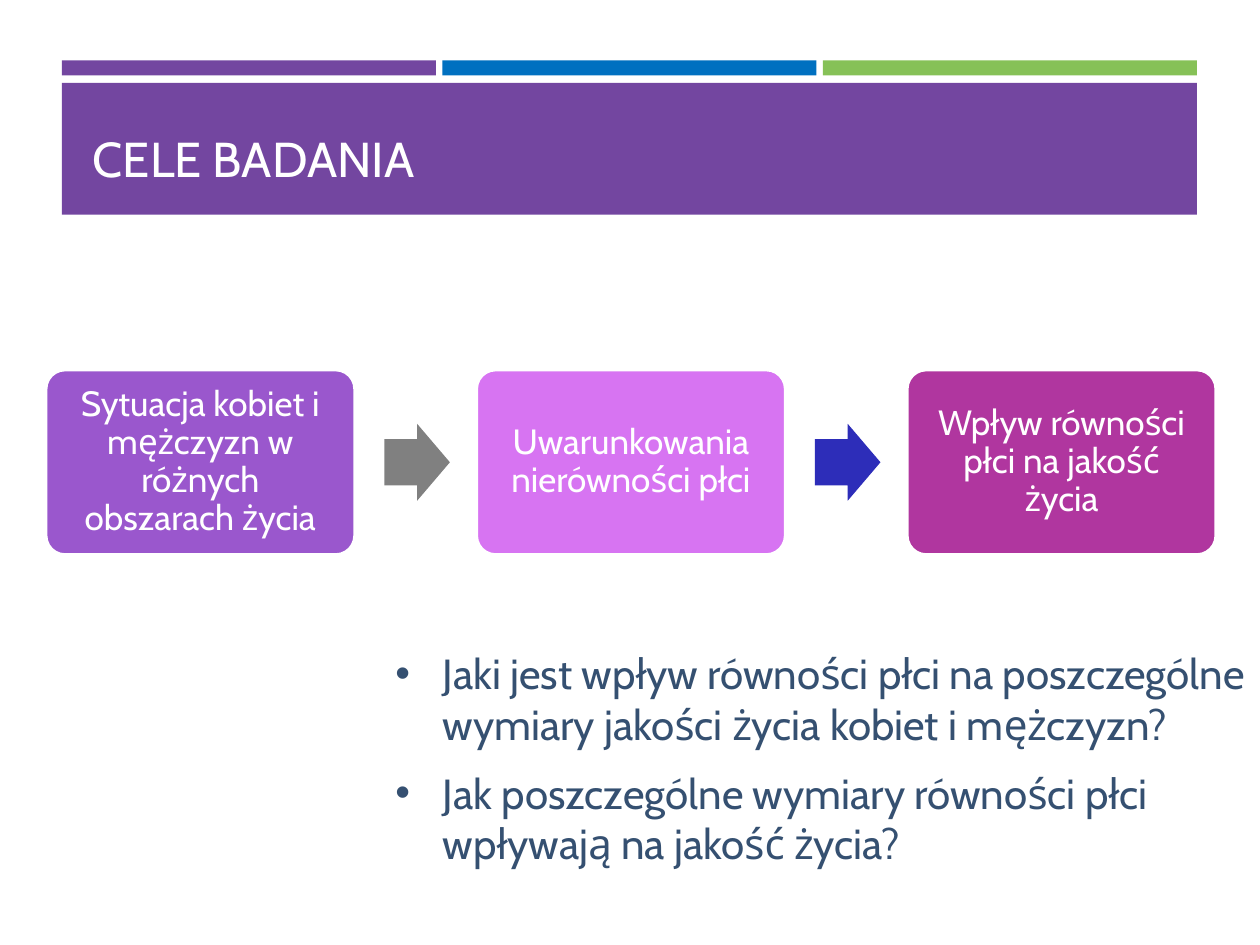
from dataclasses import dataclass
from typing import Any, Optional

from lxml import etree
from pptx import Presentation
from pptx.dml.color import RGBColor as RGB
from pptx.enum.shapes import MSO_SHAPE as Shape
from pptx.enum.text import MSO_ANCHOR as Anchor, MSO_AUTO_SIZE as AutoSize, PP_ALIGN as Align
from pptx.oxml.ns import qn
from pptx.util import Cm, Pt


@dataclass(frozen=True)
class Theme:
    font: str = "Cabin"
    white: str = "FFFFFF"
    body: str = "355071"
    band: str = "7346A0"
    stripes: tuple = ("7346A0", "0070C0", "86C157")
    title_size: int = 28
    body_size: int = 24
    step_size: int = 20


@dataclass(frozen=True)
class Box:
    """Position and size in centimetres."""
    x: float
    y: float
    w: float
    h: float

    def emu(self) -> tuple:
        return Cm(self.x), Cm(self.y), Cm(self.w), Cm(self.h)


@dataclass(frozen=True)
class Step:
    text: str
    fill: str
    arrow: Optional[str] = None


THEME = Theme()
BAND = Box(1.25, 1.67, 22.88, 2.66)
STRIPE_TOP, STRIPE_H, STRIPE_GAP = 1.22, 0.3, 0.13
FIRST_STEP = Box(0.94, 7.47, 6.2, 3.7)
STEP_PITCH = 8.68
ARROW_W, ARROW_H = 1.32, 1.55

STEPS = [
    Step("Sytuacja kobiet i mężczyzn w różnych obszarach życia", "9A57CD", "808080"),
    Step("Uwarunkowania nierówności płci", "D774F2", "2D2DB9"),
    Step("Wpływ równości płci na jakość życia", "B0369F"),
]
QUESTIONS = [
    "Jaki jest wpływ równości płci na poszczególne wymiary jakości życia kobiet i mężczyzn?",
    "Jak poszczególne wymiary równości płci wpływają na jakość życia?",
]


def apply(obj: Any, **values: Any) -> None:
    for name, value in values.items():
        setattr(obj, name, value)


def write(p: Any, text: str, size: int, color: str, **fmt: Any) -> None:
    r = p.add_run()
    r.text = text
    apply(r.font, name=THEME.font, size=Pt(size))
    r.font.color.rgb = RGB.from_string(color)
    apply(p, **fmt)


def set_frame(tf: Any, anchor: Any, x: float, y: float) -> None:
    apply(tf, word_wrap=True, auto_size=AutoSize.NONE, vertical_anchor=anchor,
          margin_left=Cm(x), margin_right=Cm(x), margin_top=Cm(y), margin_bottom=Cm(y))


def add_shape(slide: Any, kind: Any, box: Box, fill: str, *adjust: float) -> Any:
    sp = slide.shapes.add_shape(kind, *box.emu())
    sp.shadow.inherit = False
    sp.fill.solid()
    sp.fill.fore_color.rgb = RGB.from_string(fill)
    sp.line.fill.background()
    for i, value in enumerate(adjust):
        sp.adjustments[i] = value
    return sp


def place(slide: Any, sp: Any, box: Box) -> Any:
    """Move a placeholder to its box and in front of the shapes drawn so far."""
    apply(sp, **dict(zip(("left", "top", "width", "height"), box.emu())))
    slide.shapes._spTree.append(sp._element)
    return sp.text_frame


def add_bullet(p: Any, left: float, hanging: float) -> None:
    pPr = p._p.get_or_add_pPr()
    pPr.set("marL", str(Cm(left)))
    pPr.set("indent", str(-Cm(hanging)))
    etree.SubElement(pPr, qn("a:buFont")).set("typeface", "Arial")
    etree.SubElement(pPr, qn("a:buChar")).set("char", "•")


def draw_header(slide: Any) -> None:
    count = len(THEME.stripes)
    w = (BAND.w - (count - 1) * STRIPE_GAP) / count
    for i, color in enumerate(THEME.stripes):
        x = BAND.x + i * (w + STRIPE_GAP)
        add_shape(slide, Shape.RECTANGLE, Box(x, STRIPE_TOP, w, STRIPE_H), color)
    add_shape(slide, Shape.RECTANGLE, BAND, THEME.band)

    tf = place(slide, slide.shapes.title, Box(1.62, 1.9, 22.2, 2.01))
    set_frame(tf, Anchor.BOTTOM, 0.25, 0.13)
    write(tf.paragraphs[0], "CELE BADANIA", THEME.title_size, THEME.white, alignment=Align.LEFT)


def draw_questions(slide: Any) -> None:
    tf = place(slide, slide.placeholders[1], Box(6.88, 12.93, 18.52, 4.75))
    set_frame(tf, Anchor.TOP, 0.25, 0.13)
    for i, question in enumerate(QUESTIONS):
        p = tf.add_paragraph() if i else tf.paragraphs[0]
        write(p, question, THEME.body_size, THEME.body, alignment=Align.LEFT,
              space_before=Pt(4.5), space_after=Pt(6))
        add_bullet(p, 1.8, 0.96)


def draw_step(slide: Any, step: Step, box: Box) -> None:
    sp = add_shape(slide, Shape.ROUNDED_RECTANGLE, box, step.fill, 0.1)
    sp.line.color.rgb = RGB.from_string(THEME.white)
    sp.line.width = Pt(1)
    set_frame(sp.text_frame, Anchor.MIDDLE, 0.3, 0.3)
    write(sp.text_frame.paragraphs[0], step.text, THEME.step_size, THEME.white,
          alignment=Align.CENTER, line_spacing=0.9)
    if step.arrow:
        arrow = Box(box.x + 6.81, box.y + (box.h - ARROW_H) / 2, ARROW_W, ARROW_H)
        add_shape(slide, Shape.RIGHT_ARROW, arrow, step.arrow, 0.6, 0.5)


def main() -> None:
    prs = Presentation()
    apply(prs, slide_width=Cm(25.4), slide_height=Cm(19.05))
    slide = prs.slides.add_slide(prs.slide_layouts[1])

    # Coloured header with the title
    draw_header(slide)
    # Research questions
    draw_questions(slide)
    # Process: three steps joined by block arrows
    for i, step in enumerate(STEPS):
        x = FIRST_STEP.x + i * STEP_PITCH
        draw_step(slide, step, Box(x, FIRST_STEP.y, FIRST_STEP.w, FIRST_STEP.h))

    prs.save("out.pptx")


if __name__ == "__main__":
    main()
